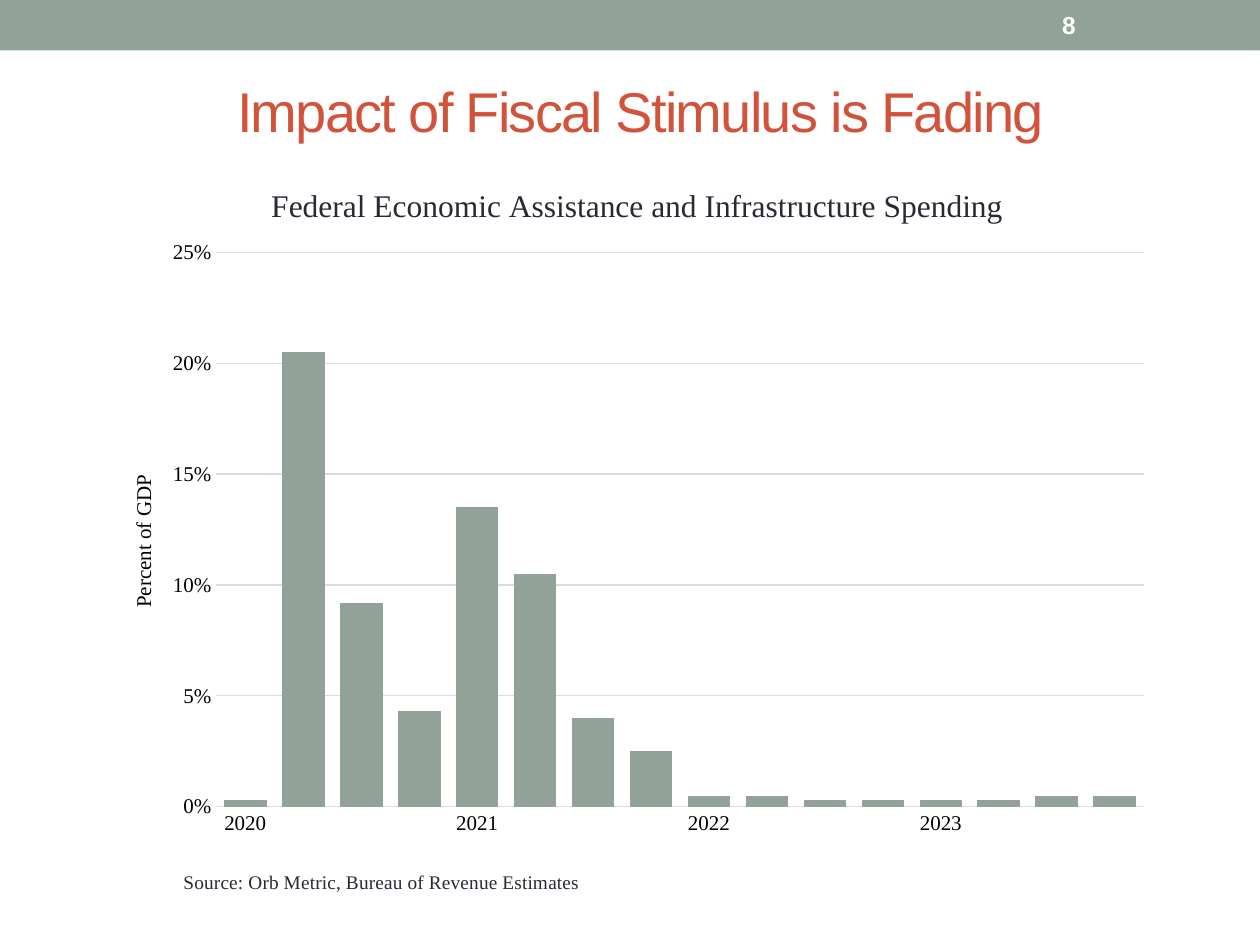
from lxml.etree import SubElement
from pptx import Presentation
from pptx.chart.data import CategoryChartData
from pptx.dml.color import RGBColor
from pptx.enum.chart import XL_CHART_TYPE, XL_TICK_MARK
from pptx.enum.shapes import MSO_SHAPE
from pptx.enum.text import MSO_ANCHOR, PP_ALIGN
from pptx.oxml.ns import qn
from pptx.util import Cm, Pt

SAGE = RGBColor(0x93, 0xA2, 0x99)
RED = RGBColor(0xD2, 0x53, 0x3C)
DARK = RGBColor(0x29, 0x29, 0x34)
GRID = RGBColor(0xDC, 0xDC, 0xE3)
BLACK = RGBColor(0, 0, 0)
WHITE = RGBColor(0xFF, 0xFF, 0xFF)
SERIF = "Times New Roman"

FIRST_YEAR = 2020
SPENDING = [0.003, 0.205, 0.092, 0.043, 0.135, 0.105, 0.04, 0.025,
            0.005, 0.005, 0.003, 0.003, 0.003, 0.003, 0.005, 0.005]


def set_font(font, name, size, color, bold=False):
    font.name = name
    font.size = Pt(size)
    font.color.rgb = color
    font.bold = bold


def add_text(s, text, box, size, color, bold=False, align=PP_ALIGN.LEFT, spacing=0):
    tf = s.shapes.add_textbox(*(Cm(v) for v in box)).text_frame
    tf.word_wrap = True
    tf.vertical_anchor = MSO_ANCHOR.MIDDLE
    p = tf.paragraphs[0]
    p.alignment = align
    r = p.add_run()
    r.text = text
    set_font(p.font, "Arial", size, color, bold)
    if spacing:
        r._r.get_or_add_rPr().set("spc", str(spacing * 100))


def set_layout(element, index, **fractions):
    """Place a chart part by fractions of the chart's size."""
    for old in element.findall(qn("c:layout")):
        element.remove(old)
    layout = SubElement(element, qn("c:layout"))
    element.insert(index, layout)
    manual = SubElement(layout, qn("c:manualLayout"))
    if "w" in fractions:
        SubElement(manual, qn("c:layoutTarget")).set("val", "inner")
    for key in ("x", "y"):
        SubElement(manual, qn(f"c:{key}Mode")).set("val", "edge")
    for key, value in fractions.items():
        SubElement(manual, qn(f"c:{key}")).set("val", str(value))


def set_title(title, text, size, color, x, y):
    tf = title.text_frame
    tf.text = text
    set_font(tf.paragraphs[0].font, SERIF, size, color)
    set_layout(title._element, 1, x=x, y=y)


def style_axis(axis):
    axis.major_tick_mark = axis.minor_tick_mark = XL_TICK_MARK.NONE
    set_font(axis.tick_labels.font, SERIF, 12, BLACK)


def add_spending_chart(s):
    # Each year is named at its first quarter only
    data = CategoryChartData(number_format="0.0%")
    data.categories = ["" if i % 4 else str(FIRST_YEAR + i // 4)
                       for i in range(len(SPENDING))]
    data.add_series("Series 1", SPENDING)
    chart = s.shapes.add_chart(XL_CHART_TYPE.COLUMN_CLUSTERED, Cm(1.9), Cm(3.18),
                               Cm(21.59), Cm(15.04), data).chart
    chart.has_legend = False
    set_font(chart.font, "Arial", 10, DARK)

    # Columns
    plot = chart.plots[0]
    plot.vary_by_categories = False
    plot.gap_width = 36
    plot.overlap = -36
    fill = plot.series[0].format.fill
    fill.solid()
    fill.fore_color.rgb = SAGE

    # Axes
    years, percent = chart.category_axis, chart.value_axis
    for axis in (years, percent):
        style_axis(axis)
    years.format.line.color.rgb = GRID
    years.format.line.width = Pt(0.75)
    percent.minimum_scale = 0
    percent.maximum_scale = 0.25
    percent.major_unit = 0.05
    percent.tick_labels.number_format = "0%"
    percent.tick_labels.number_format_is_linked = False
    percent.format.line.fill.background()
    grid_line = percent.major_gridlines.format.line
    grid_line.color.rgb = GRID
    grid_line.width = Pt(0.75)

    # Titles and plot position
    set_title(chart.chart_title, "Federal Economic Assistance and Infrastructure Spending",
              18, DARK, 0.16, 0.03)
    set_title(years.axis_title, "Source: Orb Metric, Bureau of Revenue Estimates",
              11, DARK, 0.08, 0.95)
    set_title(percent.axis_title, "Percent of GDP", 12, BLACK, 0.03, 0.42)
    plot_area = chart._chartSpace.chart.plotArea
    set_layout(plot_area, 0, x=0.114, y=0.127, w=0.866, h=0.743)


def add_band(s):
    sp = s.shapes.add_shape(MSO_SHAPE.RECTANGLE, 0, 0, Cm(25.4), Cm(1.02))
    sp.shadow.inherit = False
    sp.fill.solid()
    sp.fill.fore_color.rgb = SAGE
    sp.line.fill.background()


def main():
    prs = Presentation()
    prs.slide_width, prs.slide_height = Cm(25.4), Cm(19.05)
    s = prs.slides.add_slide(prs.slide_layouts[6])

    # Header
    add_band(s)
    add_text(s, "Impact of Fiscal Stimulus is Fading", (1.27, 1.27, 23.29, 1.9),
             32, RED, align=PP_ALIGN.CENTER, spacing=-1)
    add_text(s, "8", (21.16, 0.05, 2.97, 0.91), 14, WHITE, bold=True)

    # Chart
    add_spending_chart(s)
    prs.save("out.pptx")


if __name__ == "__main__":
    main()
